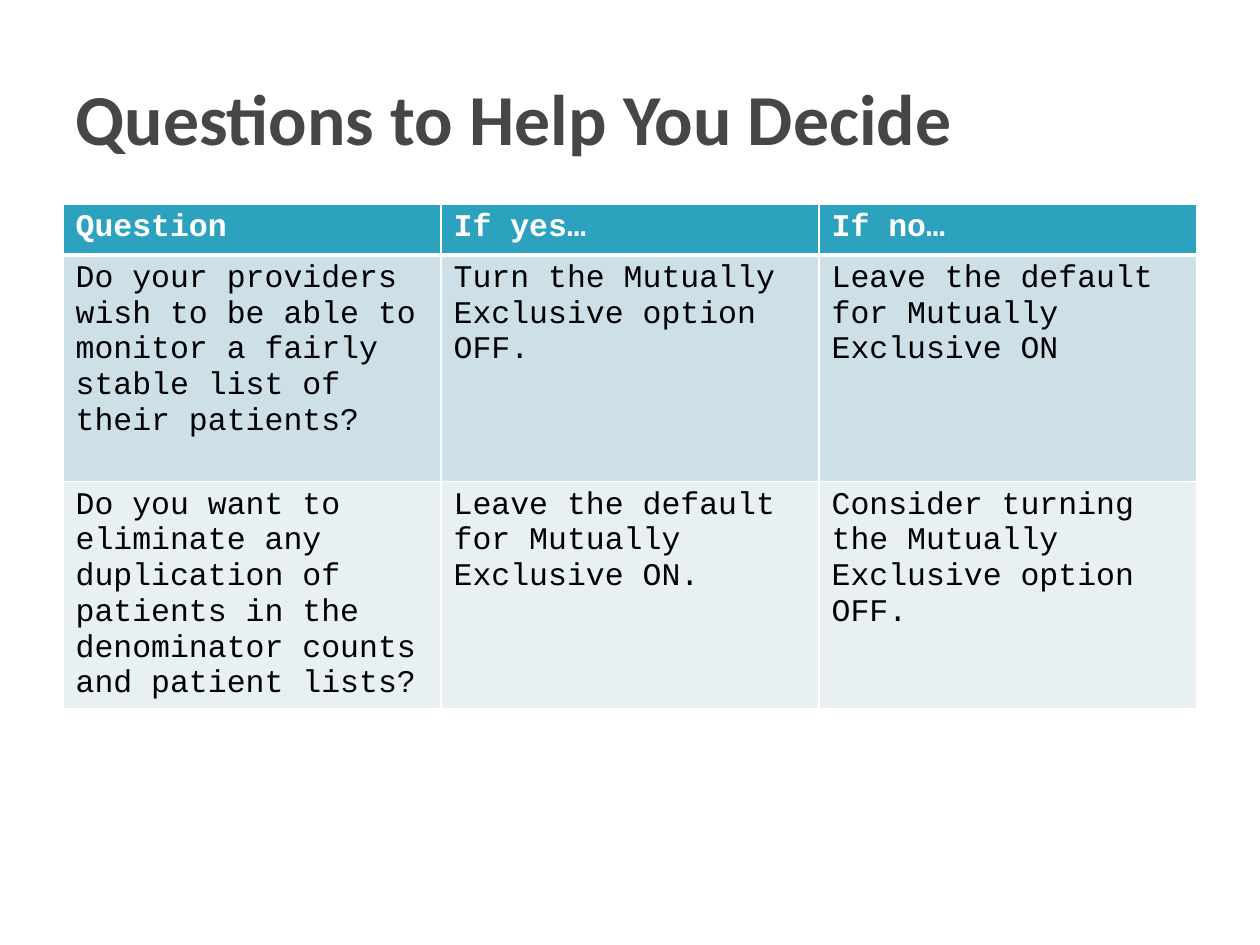
from lxml.etree import SubElement
from pptx import Presentation
from pptx.dml.color import RGBColor
from pptx.enum.text import MSO_ANCHOR
from pptx.oxml.ns import qn
from pptx.util import Pt

HUES = {
    "title": "464646",
    "head": "2DA2BF",
    "dark": "CDE0E8",
    "light": "E8F0F4",
    "white": "FFFFFF",
    "black": "000000",
}
ROWS = [
    ["Question", "If yes…", "If no…"],
    [
        "Do your providers wish to be able to monitor a fairly stable list of their patients?",
        "Turn the Mutually Exclusive option OFF.",
        "Leave the default for Mutually Exclusive ON",
    ],
    [
        "Do you want to eliminate any duplication of patients in the denominator counts and patient lists?",
        "Leave the default for Mutually Exclusive ON.",
        "Consider turning the Mutually Exclusive option OFF.",
    ],
]
FILLS = ["head", "dark", "light"]
HIGHS = [29, 129.6, 129.6]
LEFT, WIDTH = 36, 648


def color(name):
    return RGBColor.from_string(HUES[name])


def add_run(frame, text, font, size, hue, bold):
    run = frame.paragraphs[0].add_run()
    run.text = text
    run.font.name = font
    run.font.size = Pt(size)
    run.font.bold = bold
    run.font.color.rgb = color(hue)


def add_title(slide, text):
    box = slide.shapes.add_textbox(Pt(LEFT), Pt(21.6), Pt(WIDTH), Pt(90))
    frame = box.text_frame
    frame.word_wrap = True
    frame.vertical_anchor = MSO_ANCHOR.MIDDLE
    add_run(frame, text, "Calibri", 41, "title", True)


def add_edge(cell, side, width):
    props = cell._tc.get_or_add_tcPr()
    line = SubElement(props, qn(f"a:ln{side}"), w=str(Pt(width)))
    fill = SubElement(line, qn("a:solidFill"))
    SubElement(fill, qn("a:srgbClr"), val=HUES["white"])


def fill_cell(cell, text, row):
    head = row == 0
    edges = {"L": 1, "R": 1, "T": 3 if row == 1 else 1, "B": 3 if head else 1}
    for side, width in edges.items():
        add_edge(cell, side, width)
    cell.fill.solid()
    cell.fill.fore_color.rgb = color(FILLS[row])
    hue = "white" if head else "black"
    add_run(cell.text_frame, text, "Courier New", 18, hue, head)


def add_grid(slide):
    count = len(ROWS[0])
    frame = slide.shapes.add_table(
        len(ROWS), count, Pt(LEFT), Pt(116.64), Pt(WIDTH), Pt(sum(HIGHS))
    )
    table = frame.table
    for col in table.columns:
        col.width = Pt(WIDTH / count)
    for row, texts in enumerate(ROWS):
        table.rows[row].height = Pt(HIGHS[row])
        for col, text in enumerate(texts):
            fill_cell(table.cell(row, col), text, row)


def main():
    deck = Presentation()
    deck.slide_width, deck.slide_height = Pt(720), Pt(540)
    slide = deck.slides.add_slide(deck.slide_layouts[6])
    add_grid(slide)
    add_title(slide, "Questions to Help You Decide")
    deck.save("out.pptx")


if __name__ == "__main__":
    main()
